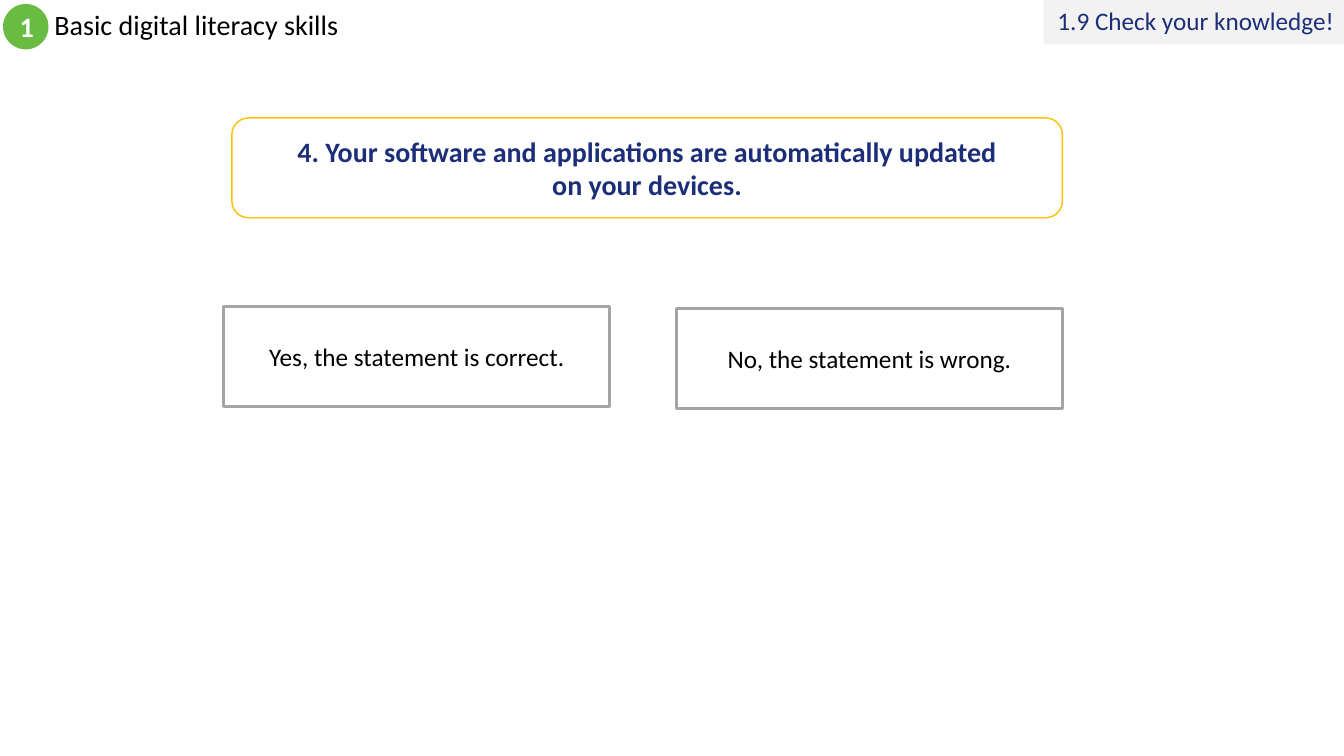
import dataclasses

import pptx
import pptx.dml.color
import pptx.enum.shapes
import pptx.enum.text
import pptx.util

SHAPE = pptx.enum.shapes.MSO_SHAPE
ALIGN = pptx.enum.text.PP_ALIGN


@dataclasses.dataclass(frozen=True)
class Theme:
    font: str = "Calibri"
    black: str = "000000"
    white: str = "FFFFFF"
    navy: str = "1C2E78"
    green: str = "68BC42"
    amber: str = "FFC000"
    grey: str = "A5A5A5"
    pale: str = "F2F2F2"
    large: int = 20
    medium: int = 18


class Deck:
    def __init__(self, prs, theme):
        self.prs = prs
        self.theme = theme
        self.slide = prs.slides.add_slide(prs.slide_layouts[5])

    def area(self, left, top, width, height):
        w, h = self.prs.slide_width, self.prs.slide_height
        return [round(share * side / 100) for share, side in
                zip((left, top, width, height), (w, h, w, h))]

    def apply(self, obj, formats):
        for name, value in formats.items():
            setattr(obj, name, value)

    def set_text(self, sp, lines, size, color, bold=False, **formats):
        tf = sp.text_frame
        self.apply(tf, {
            "text": "\n".join(lines),
            "word_wrap": True,
            "auto_size": pptx.enum.text.MSO_AUTO_SIZE.NONE,
            "vertical_anchor": pptx.enum.text.MSO_ANCHOR.MIDDLE,
        })
        for p in tf.paragraphs:
            self.apply(p, formats)
            for r in p.runs:
                self.apply(r.font, {"name": self.theme.font, "bold": bold,
                                    "size": pptx.util.Pt(size)})
                r.font.color.rgb = pptx.dml.color.RGBColor.from_string(color)

    def title(self, area, text):
        sp = self.slide.shapes.title
        names = ("left", "top", "width", "height")
        self.apply(sp, dict(zip(names, self.area(*area))))
        self.set_text(sp, [text], self.theme.large, self.theme.black,
                      alignment=ALIGN.LEFT, line_spacing=0.9)

    def box(self, kind, area, fill, line=None, weight=1):
        sp = self.slide.shapes.add_shape(kind, *self.area(*area))
        sp.shadow.inherit = False
        sp.fill.solid()
        sp.fill.fore_color.rgb = pptx.dml.color.RGBColor.from_string(fill)
        if line:
            sp.line.color.rgb = pptx.dml.color.RGBColor.from_string(line)
            sp.line.width = pptx.util.Pt(weight)
        else:
            sp.line.fill.background()
        return sp

    def badge(self, area, text):
        t = self.theme
        sp = self.box(SHAPE.OVAL, area, t.green)
        self.set_text(sp, [text], t.large, t.white, True, alignment=ALIGN.CENTER)

    def tag(self, area, text):
        t = self.theme
        sp = self.box(SHAPE.RECTANGLE, area, t.pale)
        self.set_text(sp, [text], t.medium, t.navy,
                      alignment=ALIGN.RIGHT, line_spacing=0.9)

    def question(self, area, lines):
        t = self.theme
        sp = self.box(SHAPE.ROUNDED_RECTANGLE, area, t.white, t.amber)
        self.set_text(sp, lines, t.large, t.navy, True, alignment=ALIGN.CENTER)

    def answer(self, left, top, text):
        t = self.theme
        sp = self.box(SHAPE.RECTANGLE, (left, top, 28.73, 13.2), t.white, t.grey, 2)
        self.set_text(sp, [text], t.medium, t.black, alignment=ALIGN.CENTER)


def main():
    prs = pptx.Presentation()
    prs.slide_width = pptx.util.Inches(13.33)
    prs.slide_height = pptx.util.Inches(7.5)
    deck = Deck(prs, Theme())
    deck.title((3.3, 0.53, 60, 6), "Basic digital literacy skills")
    deck.badge((0.23, 0.53, 3.38, 6), "1")
    deck.question((17.25, 15.6, 61.8, 13.2), [
        "4. Your software and applications are automatically updated",
        "on your devices.",
    ])
    deck.tag((77.64, 0, 22.36, 5.87), "1.9 Check your knowledge!")
    deck.answer(50.33, 40.8, "No, the statement is wrong.")
    deck.answer(16.65, 40.53, "Yes, the statement is correct.")
    prs.save("out.pptx")


if __name__ == "__main__":
    main()
